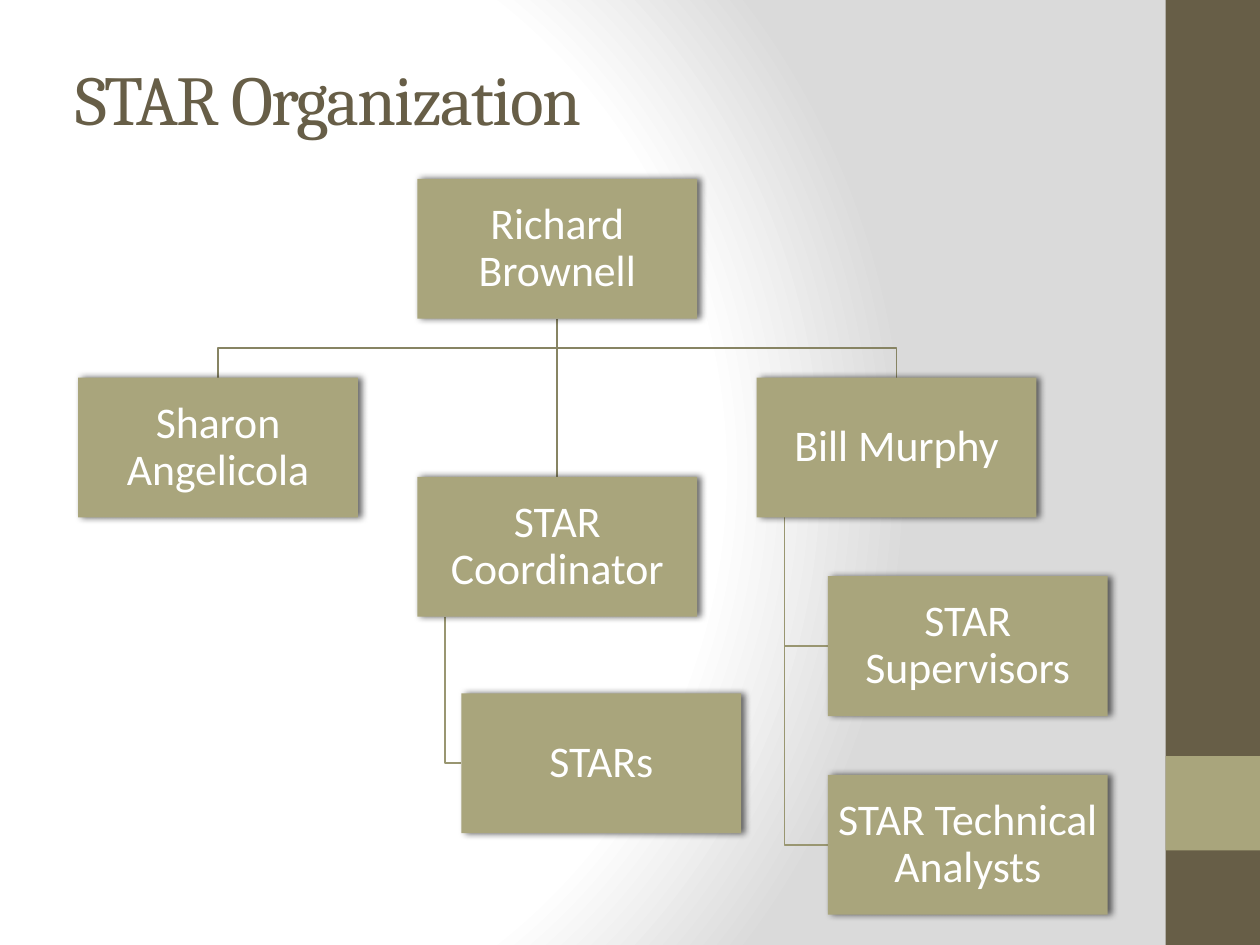
import pptx
import pptx.dml.color
import pptx.enum.shapes
import pptx.enum.text
import pptx.oxml
import pptx.oxml.ns
import pptx.util

RGBColor = pptx.dml.color.RGBColor
Inches = pptx.util.Inches
Pt = pptx.util.Pt

BROWN = RGBColor(0x67, 0x5E, 0x47)
OLIVE = RGBColor(0xA9, 0xA5, 0x7C)
BRANCH = RGBColor(0x87, 0x84, 0x63)
TWIG = RGBColor(0x99, 0x96, 0x71)
WHITE = RGBColor(0xFF, 0xFF, 0xFF)
GREY = RGBColor(0xDA, 0xDA, 0xDA)

WIDTH, HEIGHT = 10, 7.5
BOX_WIDTH, BOX_HEIGHT = 2.22, 1.11
NAMESPACES = pptx.oxml.ns.nsdecls("a", "p")

TITLE_FONT = {"name": "Cambria", "size": Pt(40)}
BOX_FONT = {"name": "Calibri", "size": Pt(25)}
MIDDLE = {"word_wrap": True, "vertical_anchor": pptx.enum.text.MSO_ANCHOR.MIDDLE}
BOX_FRAME = MIDDLE | {
    f"margin_{side}": Inches(0.02) for side in ("left", "right", "top", "bottom")
}
BOX_PARA = {"alignment": pptx.enum.text.PP_ALIGN.CENTER, "line_spacing": 0.9}

PEOPLE = {
    "Richard Brownell": (1, 0),
    "Sharon Angelicola": (0, 1),
    "STAR Coordinator": (1, 1.5),
    "STARs": (1.13, 2.59),
    "Bill Murphy": (2, 1),
    "STAR Supervisors": (2.21, 2),
    "STAR Technical Analysts": (2.21, 3),
}
REPORTS = {"Richard Brownell": ["Bill Murphy", "STAR Coordinator", "Sharon Angelicola"]}
HANGING = {
    "Bill Murphy": ["STAR Technical Analysts", "STAR Supervisors"],
    "STAR Coordinator": ["STARs"],
}


def apply(target, values):
    for name, value in values.items():
        setattr(target, name, value)


def write(shape, text, font, color, frame, para_format):
    apply(shape.text_frame, frame)
    para = shape.text_frame.paragraphs[0]
    apply(para, para_format)
    span = para.add_run()
    span.text = text
    apply(span.font, font)
    span.font.color.rgb = color
    return span


def add_block(page, left, top, width, height, color):
    block = page.shapes.add_shape(
        pptx.enum.shapes.MSO_SHAPE.RECTANGLE,
        *map(Inches, (left, top, width, height)))
    block.shadow.inherit = False
    block.fill.solid()
    block.fill.fore_color.rgb = color
    block.line.fill.background()
    return block


def add_background(page):
    stops = "".join(
        f'<a:gs pos="{share * 1000}"><a:srgbClr val="{color}"/></a:gs>'
        for share, color in ((0, WHITE), (75, WHITE), (100, GREY)))
    page.element.cSld.insert(0, pptx.oxml.parse_xml(
        f'<p:bg {NAMESPACES}><p:bgPr><a:gradFill rotWithShape="1">'
        f'<a:gsLst>{stops}</a:gsLst><a:path path="circle">'
        '<a:fillToRect l="20000" t="50000" r="100000" b="50000"/></a:path>'
        '</a:gradFill><a:effectLst/></p:bgPr></p:bg>'))


def add_sidebar(page, left, top, width, height):
    add_block(page, left, top, width, height, BROWN)
    add_block(page, left, top + height * 0.8, width, height * 0.1, OLIVE)


def add_title(page, left, top, width, height):
    box = page.shapes.add_textbox(*map(Inches, (left, top, width, height)))
    span = write(box, "STAR Organization", TITLE_FONT, BROWN, MIDDLE, {})
    span.font._element.set("spc", "-100")


def add_line(page, points, color):
    corners = [(Inches(x), Inches(y)) for x, y in points]
    if len({x for x, y in corners}) == 1:
        line = page.shapes.add_connector(
            pptx.enum.shapes.MSO_CONNECTOR.STRAIGHT, *corners[0], *corners[-1])
        line.element.spPr.append(
            pptx.oxml.parse_xml(f"<a:effectLst {NAMESPACES}/>"))
    else:
        builder = page.shapes.build_freeform(*corners[0])
        builder.add_line_segments(corners[1:], close=False)
        line = builder.convert_to_shape()
        line.shadow.inherit = False
        line.fill.background()
    line.line.color.rgb = color
    line.line.width = Pt(1)


def add_person(page, left, top, name):
    box = add_block(page, left, top, BOX_WIDTH, BOX_HEIGHT, OLIVE)
    effects = box.element.spPr.find(pptx.oxml.ns.qn("a:effectLst"))
    effects.append(pptx.oxml.parse_xml(
        f'<a:outerShdw {NAMESPACES} blurRad="{Pt(4)}" dist="{Pt(2)}" dir="0" '
        'rotWithShape="0"><a:srgbClr val="000000"><a:alpha val="60000"/>'
        '</a:srgbClr></a:outerShdw>'))
    write(box, name, BOX_FONT, WHITE, BOX_FRAME, BOX_PARA)


def add_organization(page, left, top, width, height):
    column = (width - BOX_WIDTH * 1.25) / 2
    row = (height - BOX_HEIGHT) / 3
    places = {name: (left + across * column, top + down * row)
              for name, (across, down) in PEOPLE.items()}
    for boss, names in HANGING.items():
        spine = places[boss][0] + BOX_WIDTH * 0.1
        start = places[boss][1] + BOX_HEIGHT
        for name in names:
            x, y = places[name]
            middle = y + BOX_HEIGHT / 2
            add_line(page, [(spine, start), (spine, middle), (x, middle)], TWIG)
    for boss, names in REPORTS.items():
        center = places[boss][0] + BOX_WIDTH / 2
        start = places[boss][1] + BOX_HEIGHT
        turn = start + (row - BOX_HEIGHT) / 2
        for name in names:
            x, y = places[name]
            end = x + BOX_WIDTH / 2
            add_line(page, [(center, start), (center, turn), (end, turn), (end, y)],
                     BRANCH)
    for name, place in places.items():
        add_person(page, *place, name)


def main():
    deck = pptx.Presentation()
    apply(deck, {"slide_width": Inches(WIDTH), "slide_height": Inches(HEIGHT)})
    page = deck.slides.add_slide(deck.slide_layouts[6])
    add_background(page)
    add_sidebar(page, WIDTH * 0.925, 0, WIDTH * 0.075, HEIGHT)
    add_title(page, WIDTH * 0.05, HEIGHT * 0.04, 8.33, 0.95)
    add_organization(page, 0.62, 1.42, 8.16, 5.84)
    deck.save("out.pptx")


if __name__ == "__main__":
    main()
